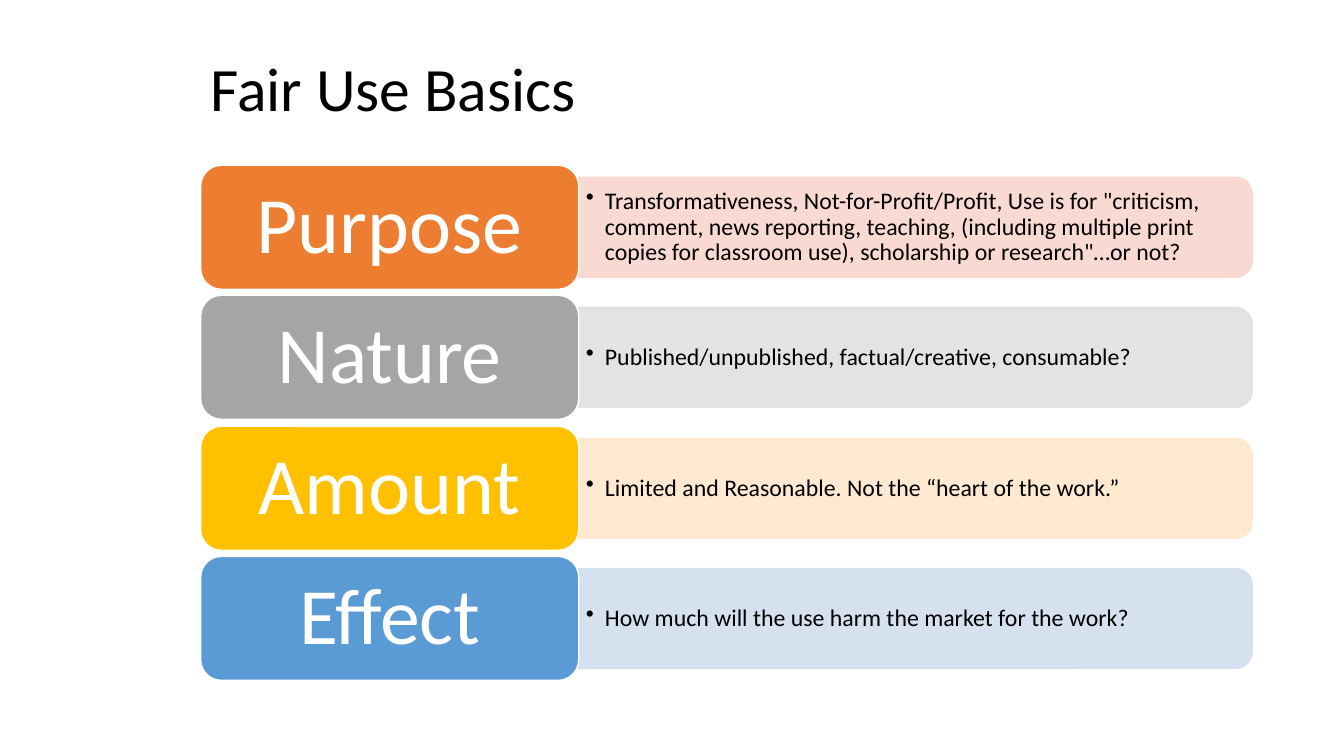
from dataclasses import dataclass

from lxml.etree import SubElement
from pptx import Presentation
from pptx.dml.color import RGBColor
from pptx.enum.shapes import MSO_SHAPE
from pptx.enum.text import MSO_ANCHOR, PP_ALIGN
from pptx.oxml.ns import qn
from pptx.shapes.autoshape import Shape
from pptx.slide import Slide
from pptx.text.text import TextFrame
from pptx.util import Emu, Pt

FONT = "Calibri"
BLACK = RGBColor(0x00, 0x00, 0x00)
WHITE = RGBColor(0xFF, 0xFF, 0xFF)
ORANGE, PALE_ORANGE = RGBColor(0xED, 0x7D, 0x31), RGBColor(0xF8, 0xD7, 0xCE)
GRAY, PALE_GRAY = RGBColor(0xA5, 0xA5, 0xA5), RGBColor(0xE1, 0xE1, 0xE1)
GOLD, PALE_GOLD = RGBColor(0xFF, 0xC0, 0x00), RGBColor(0xFF, 0xE8, 0xCC)
BLUE, PALE_BLUE = RGBColor(0x5B, 0x9B, 0xD5), RGBColor(0xD2, 0xDE, 0xEF)

# Layout in px, 100 to the inch
LEFT, TOP = 199, 164
LABEL_W, LABEL_H = 375, 123
PANEL_W, PANEL_H = 668, 99
DETAIL_W, DETAIL_H = 663, 89
LAST_TOP = 552
HANGING = 19


@dataclass(frozen=True)
class Factor:
    label: str
    detail: str
    color: RGBColor
    tint: RGBColor


FACTORS = [
    Factor("Purpose",
           'Transformativeness, Not-for-Profit/Profit, Use is for "criticism, '
           'comment, news reporting, teaching, (including multiple print copies '
           'for classroom use), scholarship or research"…or not?',
           ORANGE, PALE_ORANGE),
    Factor("Nature", "Published/unpublished, factual/creative, consumable?",
           GRAY, PALE_GRAY),
    Factor("Amount", "Limited and Reasonable. Not the “heart of the work.”",
           GOLD, PALE_GOLD),
    Factor("Effect", "How much will the use harm the market for the work?",
           BLUE, PALE_BLUE),
]


def px(length: float) -> Emu:
    return Emu(round(length * 9144))


def write(frame: TextFrame, text: str, size: int, color: RGBColor,
          align: PP_ALIGN, inset_x: int, inset_y: int, bullet: bool = False) -> None:
    frame.word_wrap = True
    frame.vertical_anchor = MSO_ANCHOR.MIDDLE
    frame.margin_left = frame.margin_right = px(inset_x)
    frame.margin_top = frame.margin_bottom = px(inset_y)
    paragraph = frame.paragraphs[0]
    paragraph.text = text
    if bullet:
        properties = paragraph._p.get_or_add_pPr()
        properties.set("marL", str(px(HANGING)))
        properties.set("indent", str(px(-HANGING)))
        SubElement(properties, qn("a:buChar"), char="•")
    paragraph.alignment = align
    paragraph.line_spacing = 0.9
    paragraph.font.name = FONT
    paragraph.font.size = Pt(size)
    paragraph.font.color.rgb = color


def add_block(slide: Slide, kind: MSO_SHAPE, left: float, top: float, width: int,
              height: int, fill: RGBColor, outline: RGBColor) -> Shape:
    block = slide.shapes.add_shape(kind, px(left), px(top), px(width), px(height))
    block.shadow.inherit = False
    block.fill.solid()
    block.fill.fore_color.rgb = fill
    block.line.color.rgb = outline
    block.line.width = Pt(1)
    return block


def add_factor(slide: Slide, factor: Factor, top: int) -> None:
    middle = top + LABEL_H / 2
    seam = LEFT + LABEL_W

    # Pale panel, turned so that its rounded corners face right
    panel = add_block(slide, MSO_SHAPE.ROUND_2_SAME_RECTANGLE,
                      seam + (PANEL_W - PANEL_H) / 2, middle - PANEL_W / 2,
                      PANEL_H, PANEL_W, factor.tint, factor.tint)
    panel.rotation = 90
    for color in panel._element.spPr.iter(qn("a:srgbClr")):
        SubElement(color, qn("a:alpha"), val="90000")

    # Bulleted detail over the panel
    detail = slide.shapes.add_textbox(px(seam), px(middle - DETAIL_H / 2),
                                      px(DETAIL_W), px(DETAIL_H))
    write(detail.text_frame, factor.detail, 17, BLACK, PP_ALIGN.LEFT, 7, 4, bullet=True)

    # Coloured label
    label = add_block(slide, MSO_SHAPE.ROUNDED_RECTANGLE, LEFT, top,
                      LABEL_W, LABEL_H, factor.color, WHITE)
    write(label.text_frame, factor.label, 57, WHITE, PP_ALIGN.CENTER, 30, 18)


def main() -> None:
    deck = Presentation()
    deck.slide_width, deck.slide_height = px(1333), px(750)
    slide = deck.slides.add_slide(deck.slide_layouts[6])

    # Title
    title = slide.shapes.add_textbox(px(LEFT), px(18), px(1043), px(145))
    write(title.text_frame, "Fair Use Basics", 44, BLACK, PP_ALIGN.LEFT, 10, 5)

    # Four factors, evenly spaced
    pitch = (LAST_TOP - TOP) / (len(FACTORS) - 1)
    for row, factor in enumerate(FACTORS):
        add_factor(slide, factor, round(TOP + row * pitch))

    deck.save("out.pptx")


if __name__ == "__main__":
    main()
